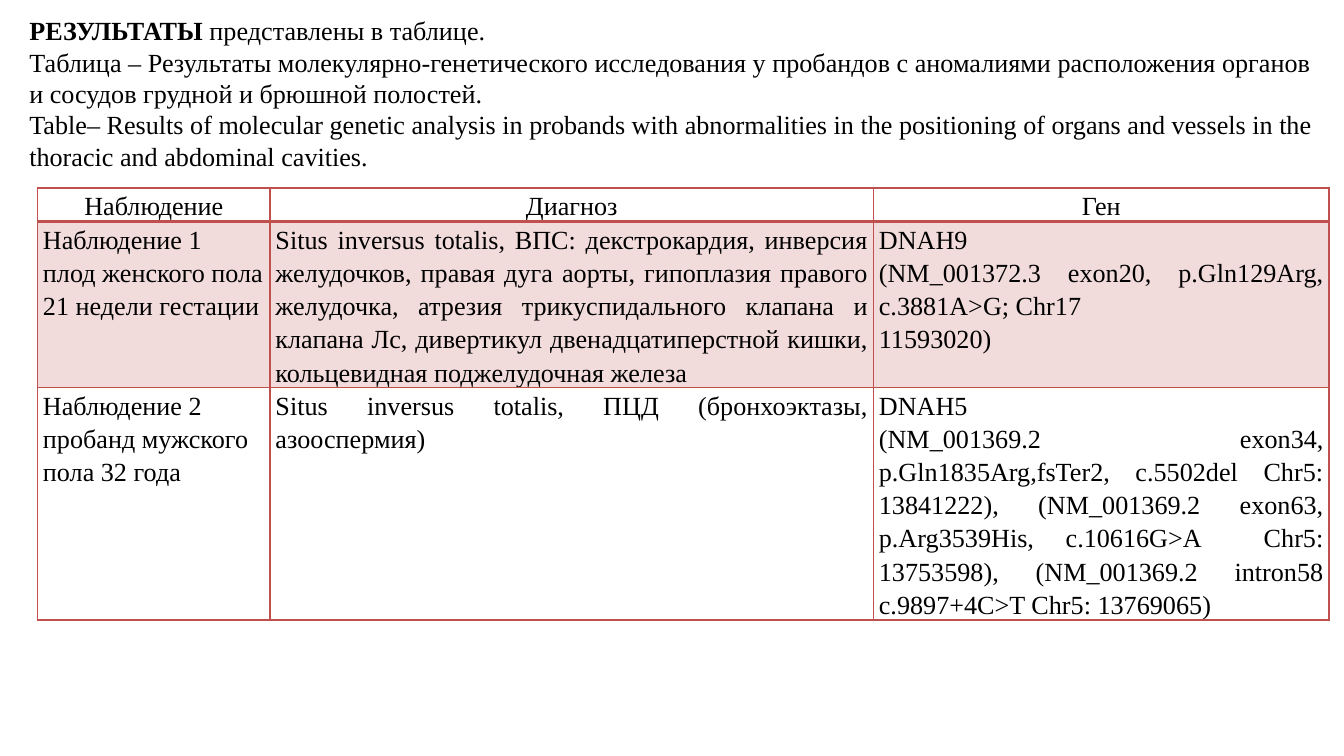
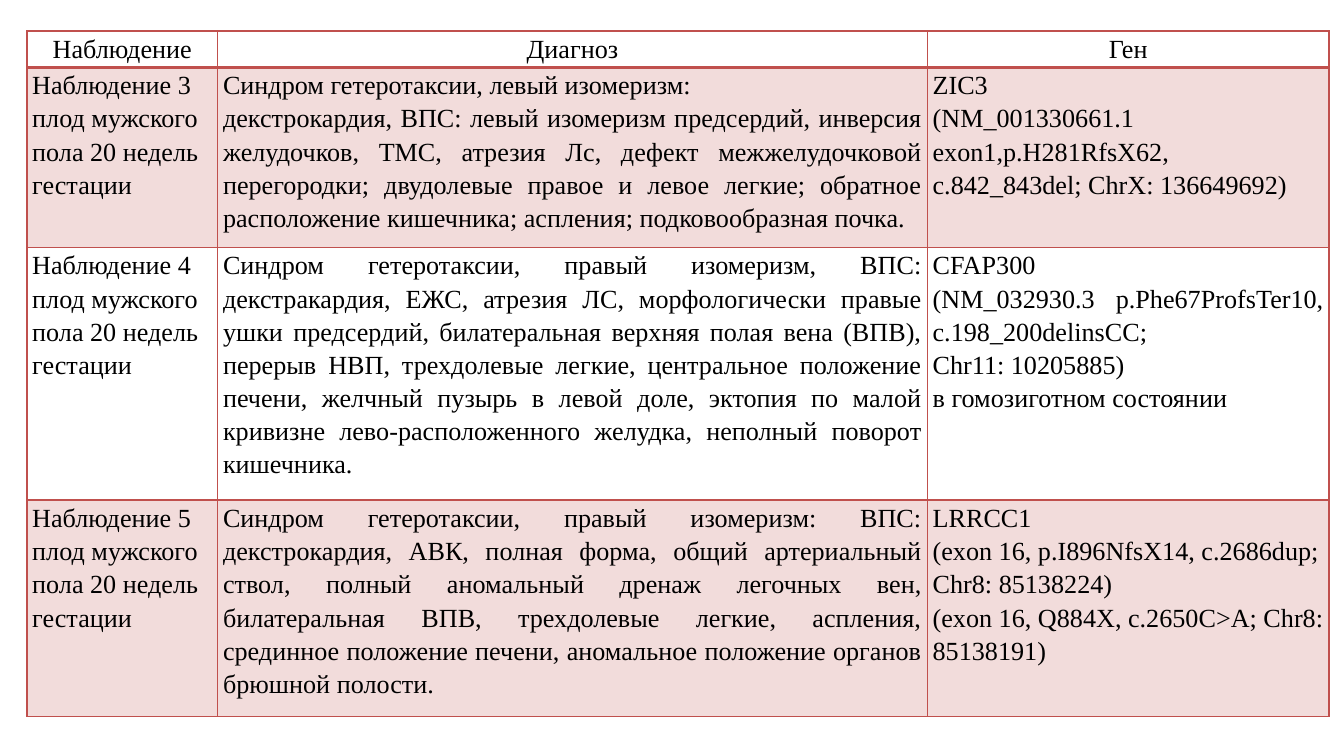
from lxml import etree
from pptx import Presentation
from pptx.dml.color import RGBColor
from pptx.enum.text import MSO_ANCHOR, PP_ALIGN
from pptx.oxml.ns import qn
from pptx.util import Inches, Pt

LEFT, CENTER, JUSTIFY = PP_ALIGN.LEFT, PP_ALIGN.CENTER, PP_ALIGN.JUSTIFY
TOP = MSO_ANCHOR.TOP
COLORS = {"text": "000000", "accent": "C0504D"}
FONT = "Times New Roman"
BAND_ALPHA = "20000"
HEADER = ["Наблюдение", "Диагноз", "Ген"]
COLUMN_ALIGNMENTS = [LEFT, JUSTIFY, JUSTIFY]

INTRO_LEAD = "РЕЗУЛЬТАТЫ"
INTRO = [
    " представлены в таблице.",
    "Таблица – Результаты молекулярно-генетического исследования у пробандов с аномалиями "
    "расположения органов и сосудов грудной и брюшной полостей.",
    "Table– Results of molecular genetic analysis in probands with abnormalities in the "
    "positioning of organs and vessels in the thoracic and abdominal cavities.",
]
MALE_FETUS = "плод мужского пола 20 недель гестации"

# Each cell is a list of paragraphs.
TABLES = [
    {
        "left": 0.28, "top": 1.4,
        "columns": [1.73, 4.49, 3.39],
        "heights": [0.25, 1.23, 1.73],
        "left_aligned": [],
        "rows": [
            [
                ["Наблюдение 1", "плод женского пола 21 недели гестации"],
                ["Situs inversus totalis, ВПС: декстрокардия, инверсия желудочков, правая дуга "
                 "аорты, гипоплазия правого желудочка, атрезия трикуспидального клапана и клапана "
                 "Лс, дивертикул двенадцатиперстной кишки, кольцевидная поджелудочная железа"],
                ["DNAH9 ", "(NM_001372.3 exon20, p.Gln129Arg, c.3881A>G; Chr17", "11593020)"],
            ],
            [
                ["Наблюдение 2 пробанд мужского пола 32 года"],
                ["Situs inversus totalis, ПЦД (бронхоэктазы, азооспермия)"],
                ["DNAH5 ",
                 "(NM_001369.2 exon34, p.Gln1835Arg,fsTer2, c.5502del Chr5: 13841222), "
                 "(NM_001369.2 exon63, p.Arg3539His, c.10616G>A  Chr5: 13753598), "
                 "(NM_001369.2 intron58 c.9897+4C>T Chr5: 13769065)"],
            ],
        ],
    },
    {
        "left": 0.2, "top": 0.23,
        "columns": [1.42, 5.28, 2.99],
        "heights": [0.27, 1.34, 1.88, 1.61],
        "left_aligned": [(3, 2)],
        "rows": [
            [
                ["Наблюдение 3", MALE_FETUS],
                ["Синдром гетеротаксии, левый изомеризм:",
                 "декстрокардия, ВПС: левый изомеризм предсердий, инверсия желудочков, ТМС, "
                 "атрезия Лс, дефект межжелудочковой перегородки; двудолевые правое и левое "
                 "легкие; обратное расположение кишечника; аспления; подковообразная почка."],
                ["ZIC3 ", "(NM_001330661.1 exon1,p.H281RfsX62, c.842_843del; ChrX: 136649692)"],
            ],
            [
                ["Наблюдение 4", MALE_FETUS],
                ["Синдром гетеротаксии, правый изомеризм, ВПС: декстракардия, ЕЖС, атрезия ЛС, "
                 "морфологически правые ушки предсердий, билатеральная верхняя полая вена (ВПВ), "
                 "перерыв НВП, трехдолевые легкие, центральное положение печени, желчный пузырь "
                 "в левой доле, эктопия по малой кривизне лево-расположенного желудка, неполный "
                 "поворот кишечника."],
                ["CFAP300 ", "(NM_032930.3 p.Phe67ProfsTer10, c.198_200delinsCC;",
                 "Chr11: 10205885)", "в гомозиготном состоянии"],
            ],
            [
                ["Наблюдение 5", MALE_FETUS],
                ["Синдром гетеротаксии, правый изомеризм: ВПС: декстрокардия, АВК, полная форма, "
                 "общий артериальный ствол, полный аномальный дренаж легочных вен, билатеральная "
                 "ВПВ, трехдолевые легкие, аспления, срединное положение печени, аномальное "
                 "положение органов брюшной полости."],
                ["LRRCC1", "(exon 16, p.I896NfsX14, c.2686dup; Chr8: 85138224)",
                 "(exon 16, Q884X, c.2650C>A; Chr8: 85138191)"],
            ],
        ],
    },
]


def write_text(text_frame, paragraphs, lead="", alignment=LEFT, spacing=None):
    """Fill a text frame; lead is a bold opening of the first paragraph."""
    text_frame.word_wrap = True
    for index, text in enumerate(paragraphs):
        paragraph = text_frame.add_paragraph() if index else text_frame.paragraphs[0]
        paragraph.alignment = alignment
        paragraph.line_spacing = spacing
        pieces = [(text, False)]
        if lead and index == 0:
            pieces.insert(0, (lead, True))
        for piece, bold in pieces:
            run = paragraph.add_run()
            run.text = piece
            run.font.name = FONT
            run.font.size = Pt(14)
            run.font.bold = bold
            run.font.color.rgb = RGBColor.from_string(COLORS["text"])


def style_cell(cell, row_index):
    """Set margins, borders and the tint of odd rows."""
    cell.margin_left = cell.margin_right = Inches(0.04)
    cell.margin_top = cell.margin_bottom = 0
    cell.vertical_anchor = TOP
    properties = cell._tc.get_or_add_tcPr()
    header_edge = {0: "lnB", 1: "lnT"}.get(row_index)
    for side in ("lnL", "lnR", "lnT", "lnB"):
        width = Pt(2 if side == header_edge else 1)
        line = etree.SubElement(properties, qn("a:" + side), w=str(width))
        fill = etree.SubElement(line, qn("a:solidFill"))
        etree.SubElement(fill, qn("a:srgbClr"), val=COLORS["accent"])
    if row_index % 2:
        cell.fill.solid()
        cell.fill.fore_color.rgb = RGBColor.from_string(COLORS["accent"])
        color = properties.find(qn("a:solidFill")).find(qn("a:srgbClr"))
        etree.SubElement(color, qn("a:alpha"), val=BAND_ALPHA)
    else:
        cell.fill.background()


presentation = Presentation()
presentation.slide_width = Inches(10)
presentation.slide_height = presentation.slide_width * 9 // 16
blank_layout = presentation.slide_layouts[6]

for layout in TABLES:
    slide = presentation.slides.add_slide(blank_layout)
    rows = [[[title] for title in HEADER]] + layout["rows"]
    frame = slide.shapes.add_table(
        len(rows), len(HEADER), Inches(layout["left"]), Inches(layout["top"]),
        Inches(sum(layout["columns"])), Inches(sum(layout["heights"])))
    table = frame.table
    table.first_row = False
    table.horz_banding = False
    for column, width in zip(table.columns, layout["columns"]):
        column.width = Inches(width)
    for row_index, row in enumerate(rows):
        table.rows[row_index].height = Inches(layout["heights"][row_index])
        for column_index, paragraphs in enumerate(row):
            alignment = COLUMN_ALIGNMENTS[column_index]
            if row_index == 0:
                alignment = CENTER
            elif (row_index, column_index) in layout["left_aligned"]:
                alignment = LEFT
            cell = table.cell(row_index, column_index)
            style_cell(cell, row_index)
            write_text(cell.text_frame, paragraphs, alignment=alignment, spacing=1.15)

results_slide = presentation.slides[0]
intro_box = results_slide.shapes.add_textbox(Inches(0.12), Inches(0.06), Inches(9.76), Inches(1.28))
write_text(intro_box.text_frame, INTRO, lead=INTRO_LEAD)

presentation.save("out.pptx")
